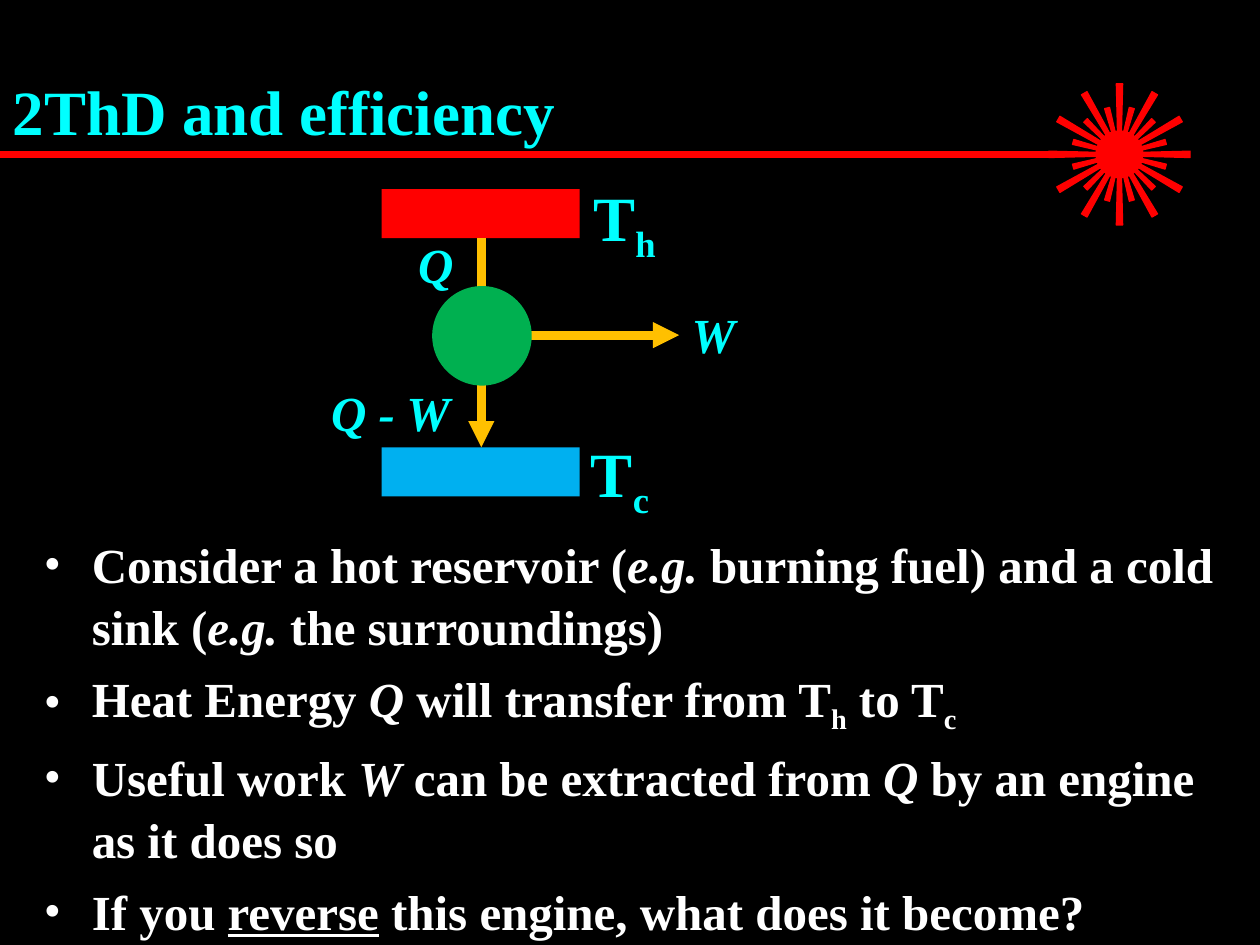
"""Build the slide on heat engines: title, reservoir diagram and four points."""
import math

import lxml.etree
import pptx
import pptx.dml.color
import pptx.enum.shapes
import pptx.enum.text
import pptx.oxml.ns
import pptx.util

Inches = pptx.util.Inches
Pt = pptx.util.Pt
qn = pptx.oxml.ns.qn
SHAPE = pptx.enum.shapes.MSO_SHAPE
COLORS = {"background": "000000", "accent": "FF0000", "cold": "00B0F0", "engine": "00B050",
          "energy": "FFC000", "label": "00FFFF", "body": "FFFFFF"}
RGB = {role: pptx.dml.color.RGBColor.from_string(value) for role, value in COLORS.items()}


def write(paragraph, text, size=28, color="label", italic=False, underline=False, subscript=False):
    run = paragraph.add_run()
    run.text = text
    run.font.name = "Times New Roman"
    run.font.size = Pt(size)
    run.font.bold = True
    run.font.italic = italic
    run.font.underline = underline
    run.font.color.rgb = RGB[color]
    if subscript:
        run._r.get_or_add_rPr().set("baseline", "-25000")


def paint(shape, color, outlined=False):
    shape.shadow.inherit = False
    shape.fill.solid()
    shape.fill.fore_color.rgb = RGB[color]
    if outlined:
        shape.line.color.rgb = RGB[color]
        shape.line.width = Pt(0.75)
    else:
        shape.line.fill.background()


deck = pptx.Presentation()
deck.slide_width, deck.slide_height = Inches(10), Inches(7.5)
slide = deck.slides.add_slide(deck.slide_layouts[5])
slide.background.fill.solid()
slide.background.fill.fore_color.rgb = RGB["background"]
shapes = slide.shapes

sun_x, sun_y, sun_size = 8.885, 1.225, 0.37
sun_core = shapes.add_shape(SHAPE.OVAL, Inches(sun_x - sun_size / 2), Inches(sun_y - sun_size / 2),
                            Inches(sun_size), Inches(sun_size))
paint(sun_core, "accent", outlined=True)
for first_angle, outer, inner, outer_half, inner_half in [(0, 0.56, 0.15, 0.025, 0.015),
                                                          (15, 0.38, 0.14, 0.02, 0.012)]:
    for angle in range(first_angle, 360, 30):
        sine, cosine = math.sin(math.radians(angle)), math.cos(math.radians(angle))
        corners = [(Inches(sun_x + side * cosine + radius * sine),
                    Inches(sun_y + side * sine - radius * cosine))
                   for side, radius in [(-outer_half, outer), (outer_half, outer),
                                        (inner_half, inner), (-inner_half, inner)]]
        ray = shapes.build_freeform(*corners[0])
        ray.add_line_segments(corners[1:], close=True)
        paint(ray.convert_to_shape(), "accent", outlined=True)

title_rule = shapes.add_shape(SHAPE.RECTANGLE, 0, Inches(1.2), Inches(8.35), Inches(0.05))
paint(title_rule, "accent", outlined=True)

title = shapes.title
title.left, title.top, title.width, title.height = 0, Inches(0.25), Inches(8.5), Inches(1.25)
title.text_frame.auto_size = pptx.enum.text.MSO_AUTO_SIZE.NONE
title.text_frame.vertical_anchor = pptx.enum.text.MSO_ANCHOR.MIDDLE
title_line = title.text_frame.paragraphs[0]
title_line.alignment = pptx.enum.text.PP_ALIGN.LEFT
write(title_line, "2ThD and efficiency", size=36)

ITALIC, SUBSCRIPT = {"italic": True}, {"subscript": True}
points = [
    [("Consider a hot reservoir (", {}), ("e.g.", ITALIC),
     (" burning fuel) and a cold sink (", {}), ("e.g. ", ITALIC), ("the surroundings)", {})],
    [("Heat Energy ", {}), ("Q", ITALIC), (" will transfer from T", {}), ("h", SUBSCRIPT),
     (" to T", {}), ("c", SUBSCRIPT)],
    [("Useful work ", {}), ("W", ITALIC), (" can be extracted from ", {}), ("Q", ITALIC),
     (" by an engine as it does so", {})],
    [("If you ", {}), ("reverse", {"underline": True}),
     (" this engine, what does it become?", {})],
]
body = shapes.add_textbox(Inches(0.25), Inches(4.17), Inches(9.75), Inches(3.08)).text_frame
body.word_wrap = True
for index, point in enumerate(points):
    paragraph = body.paragraphs[0] if index == 0 else body.add_paragraph()
    paragraph.space_before = Pt(5.6)
    paragraph.line_spacing = 1.05
    properties = paragraph._p.get_or_add_pPr()
    properties.set("marL", str(Inches(0.38)))
    properties.set("indent", str(-Inches(0.38)))
    lxml.etree.SubElement(properties, qn("a:buFont")).set("typeface", "Times New Roman")
    lxml.etree.SubElement(properties, qn("a:buChar")).set("char", "•")
    for text, style in point:
        write(paragraph, text, color="body", **style)

for top, color in [(1.5, "accent"), (3.55, "cold")]:
    reservoir = shapes.add_shape(SHAPE.RECTANGLE, Inches(3.03), Inches(top),
                                 Inches(1.57), Inches(0.39))
    paint(reservoir, color)

for start_x, start_y, end_x, end_y in [(3.82, 1.89, 3.82, 3.55), (4.21, 2.66, 5.39, 2.66)]:
    flow = shapes.add_connector(pptx.enum.shapes.MSO_CONNECTOR.STRAIGHT, Inches(start_x),
                                Inches(start_y), Inches(end_x), Inches(end_y))
    flow.line.color.rgb = RGB["energy"]
    flow.line.width = Pt(5)
    lxml.etree.SubElement(flow.line._get_or_add_ln(), qn("a:tailEnd")).set("type", "triangle")
    lxml.etree.SubElement(flow._element.spPr, qn("a:effectLst"))

engine = shapes.add_shape(SHAPE.OVAL, Inches(3.43), Inches(2.27), Inches(0.79), Inches(0.79))
paint(engine, "engine")

T_STYLE = {"size": 36}
labels = [
    (4.61, 1.37, 0.79, 0.71, [("T", T_STYLE), ("h", T_STYLE | SUBSCRIPT)]),
    (4.59, 3.4, 0.79, 0.71, [("T", T_STYLE), ("c", T_STYLE | SUBSCRIPT)]),
    (3.22, 1.81, 0.79, 0.57, [("Q", ITALIC)]),
    (5.39, 2.37, 0.79, 0.57, [("W", ITALIC)]),
    (2.53, 2.99, 1.38, 0.57, [("Q - W", ITALIC)]),
]
for left, top, width, height, pieces in labels:
    label = shapes.add_textbox(Inches(left), Inches(top), Inches(width), Inches(height)).text_frame
    label.word_wrap = True
    for text, style in pieces:
        write(label.paragraphs[0], text, **style)

deck.save("out.pptx")
